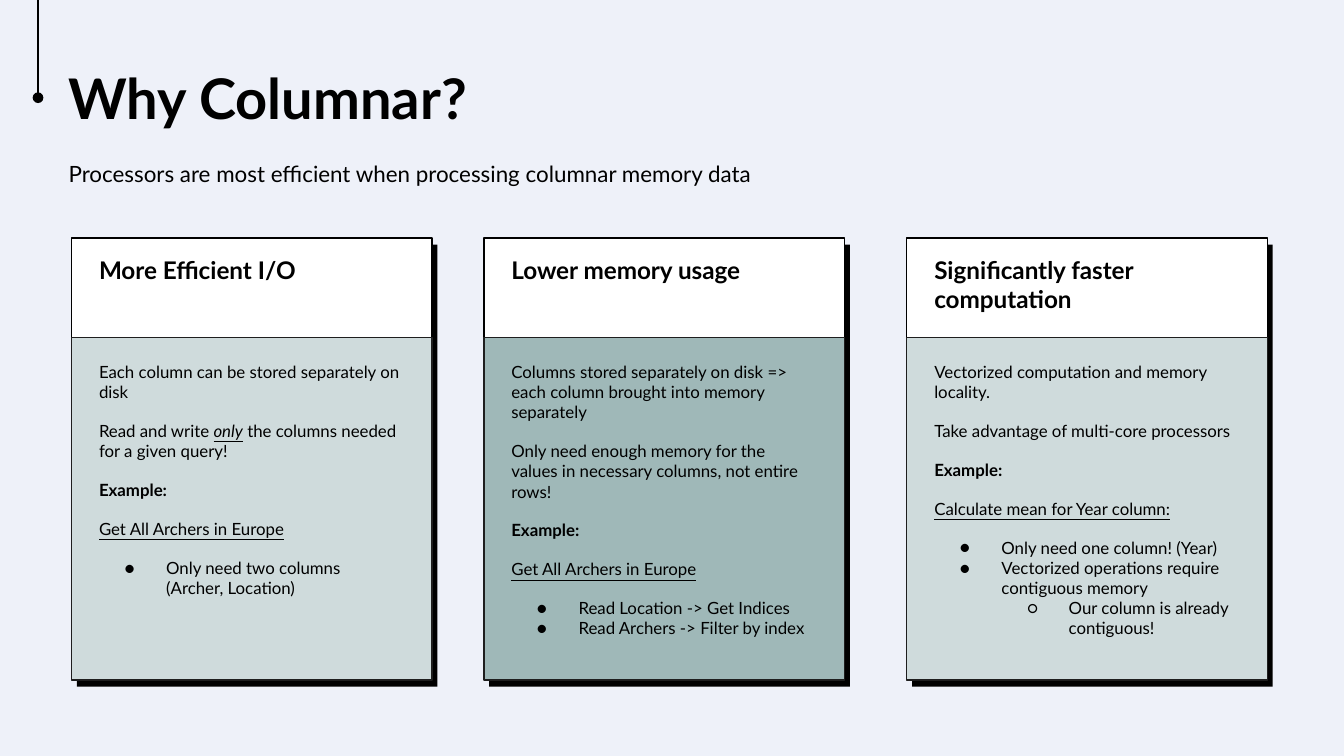
from lxml.etree import SubElement
from pptx import Presentation
from pptx.dml.color import RGBColor
from pptx.enum.shapes import MSO_CONNECTOR as Connector, MSO_SHAPE as Shape
from pptx.enum.text import MSO_AUTO_SIZE as AutoSize, MSO_ANCHOR as Anchor
from pptx.oxml.ns import qn
from pptx.util import Inches, Pt

COLUMNS = 100
ROWS = COLUMNS * 9 / 16
BLACK, WHITE, EDGE = "000000", "FFFFFF", "1E1E1E"
BACKDROP, PALE, TEAL = "EEF1F9", "CFDBDC", "9FB8B8"
FONT = "Lato"
BULLETS = {1: "●", 2: "○"}


def color(value):
    return RGBColor.from_string(value)


def add_text(para, text, size=9, bold=False, italic=False, underline=False, ink=BLACK):
    span = para.add_run()
    span.text = text
    style = span.font
    style.name, style.size = FONT, Pt(size)
    style.bold, style.italic, style.underline = bold, italic, underline
    style.color.rgb = color(ink)


def add_bullet(para, level):
    para.level = level - 1
    props = para._p.get_or_add_pPr()
    props.set("marL", str(Inches(0.5 * level)))
    props.set("indent", str(Inches(-0.31)))
    tint = SubElement(props, qn("a:buClr"))
    SubElement(tint, qn("a:srgbClr"), val=BLACK)
    SubElement(props, qn("a:buSzPts"), val="900")
    SubElement(props, qn("a:buFont"), typeface=FONT)
    SubElement(props, qn("a:buChar"), char=BULLETS[level])


class SlideBuilder:
    """Draws on one slide; lengths are grid columns and rows."""

    def __init__(self, deck):
        self.column = deck.slide_width / COLUMNS
        self.row = deck.slide_height / ROWS
        self.page = deck.slides.add_slide(deck.slide_layouts[6])
        backdrop = self.page.background.fill
        backdrop.solid()
        backdrop.fore_color.rgb = color(BACKDROP)

    def place(self, left, top, width, height):
        return (round(left * self.column), round(top * self.row),
                round(width * self.column), round(height * self.row))

    def shape(self, kind, *area, fill, line=None):
        shape = self.page.shapes.add_shape(kind, *self.place(*area))
        shape.shadow.inherit = False
        shape.fill.solid()
        shape.fill.fore_color.rgb = color(fill)
        if line:
            shape.line.color.rgb = color(line)
            shape.line.width = Pt(0.75)
        else:
            shape.line.fill.background()

    def line(self, left, top, right, bottom):
        line = self.page.shapes.add_connector(
            Connector.STRAIGHT, *self.place(left, top, right, bottom))
        line.line.color.rgb = color(BLACK)
        line.line.width = Pt(0.75)
        SubElement(line._element.spPr, qn("a:effectLst"))

    def text(self, *area, paragraphs, **style):
        """Each paragraph is (bullet level, space before, [(text, format), ...])."""
        box = self.page.shapes.add_textbox(*self.place(*area))
        frame = box.text_frame
        frame.word_wrap = True
        frame.auto_size = AutoSize.SHAPE_TO_FIT_TEXT
        frame.vertical_anchor = Anchor.TOP
        frame.margin_left = frame.margin_right = frame.margin_top = frame.margin_bottom = 0
        for index, (level, gap, spans) in enumerate(paragraphs):
            para = frame.add_paragraph() if index else frame.paragraphs[0]
            para.space_before = Pt(gap)
            if level:
                add_bullet(para, level)
            for text, extra in spans:
                add_text(para, text, **{**style, **extra})

    def label(self, *area, text, **style):
        self.text(*area, paragraphs=[(0, 0, [(text, {})])], **style)

    def card(self, left, fill, title, title_height, body, body_height):
        width, inset, text_width = 26.83, 2.05, 22.45
        self.shape(Shape.RECTANGLE, left + 0.4, 18.2, width, 32.9, fill=BLACK)
        self.shape(Shape.RECTANGLE, left, 17.7, width, 7.4, fill=WHITE, line=BLACK)
        self.shape(Shape.RECTANGLE, left, 25.1, width, 25.5, fill=fill, line=EDGE)
        self.label(left + inset, 19, text_width, title_height, text=title, size=13, bold=True)
        self.text(left + inset, 26.9, text_width, body_height, paragraphs=body)


def plain(*spans, first=False, **style):
    return 0, 0 if first else 10, [s if isinstance(s, tuple) else (s, style) for s in spans]


def bullets(*items):
    """Only the first bullet of a list is set apart from the text above it."""
    return [(level, 0 if index else 10, [(text, {})]) for index, (level, text) in enumerate(items)]


def example(task, *items):
    return [plain("Example:", bold=True), plain(task, underline=True), *bullets(*items)]


CARDS = [
    (5.32, PALE, "More Efficient I/O", 2.2, [
        plain("Each column can be stored separately on disk", first=True),
        plain("Read and write ", ("only", {"italic": True, "underline": True}),
              " the columns needed for a given query!"),
        *example("Get All Archers in Europe",
                 (1, "Only need two columns (Archer, Location)")),
    ], 17.7),
    (36, TEAL, "Lower memory usage", 2.2, [
        plain("Columns stored separately on disk => each column brought into memory separately",
              first=True),
        plain("Only need enough memory for the values in necessary columns, not entire rows!"),
        *example("Get All Archers in Europe",
                 (1, "Read Location -> Get Indices"),
                 (1, "Read Archers -> Filter by index")),
    ], 23.8),
    (67.47, PALE, "Significantly faster computation", 4.4, [
        plain("Vectorized computation and memory locality.", first=True),
        plain("Take advantage of multi-core processors"),
        *example("Calculate mean for Year column:",
                 (1, "Only need one column! (Year)"),
                 (1, "Vectorized operations require contiguous memory"),
                 (2, "Our column is already contiguous!")),
    ], 23.8),
]


def main():
    deck = Presentation()
    deck.slide_width = Inches(10)
    deck.slide_height = round(deck.slide_width * ROWS / COLUMNS)
    builder = SlideBuilder(deck)
    for card in CARDS:
        builder.card(*card)
    builder.label(5.1, 11.9, 69.9, 2, text="Processors are most efficient when processing columnar memory data",
                  size=12)
    builder.label(5.1, 4.7, 88.7, 5, text="Why Columnar?", size=30, bold=True)
    builder.line(2.83, 0, 2.83, 7.1)
    builder.shape(Shape.OVAL, 2.43, 6.87, 0.8, 0.8, fill=BLACK)
    deck.save("out.pptx")


if __name__ == "__main__":
    main()
